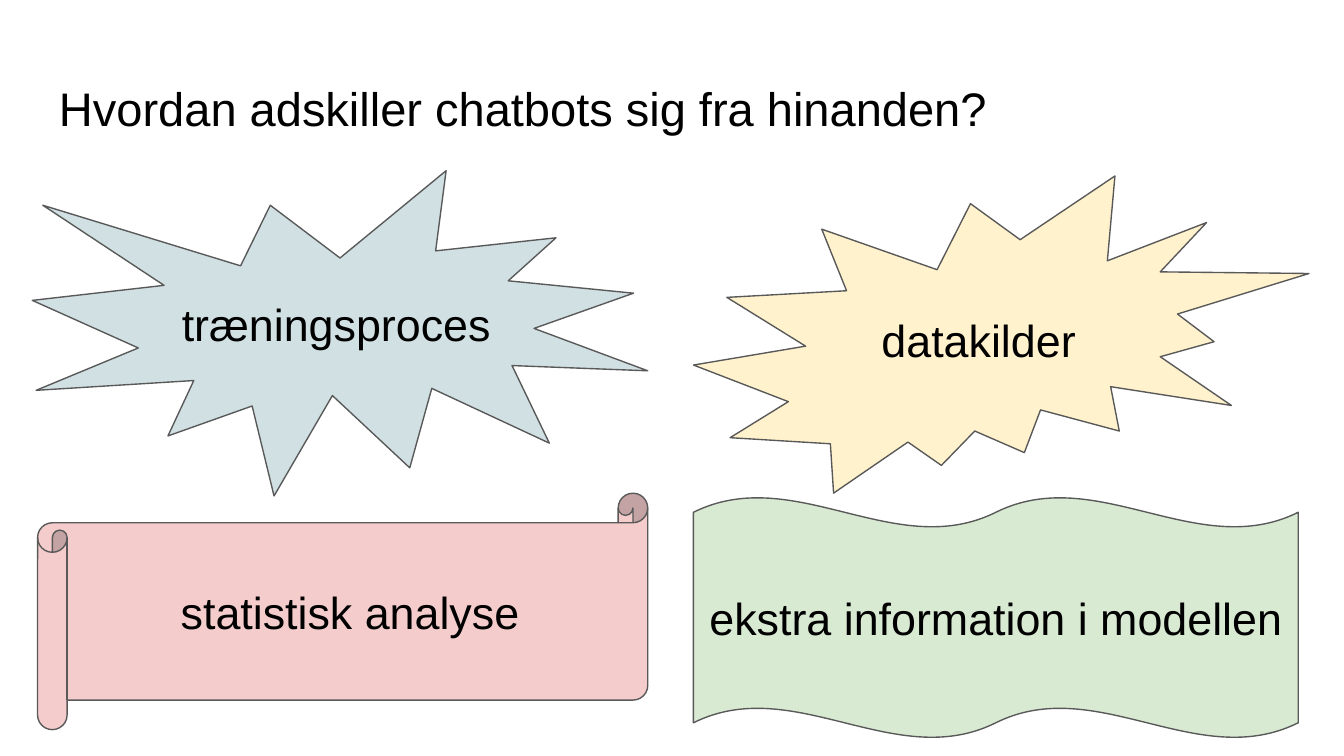
from pptx import Presentation
from pptx.dml.color import RGBColor
from pptx.enum.shapes import MSO_SHAPE
from pptx.enum.text import MSO_ANCHOR, PP_ALIGN
from pptx.util import Inches, Pt

BURST_SMALL = MSO_SHAPE.EXPLOSION1
BURST_LARGE = MSO_SHAPE.EXPLOSION2
SCROLL = MSO_SHAPE.HORIZONTAL_SCROLL
WAVE = MSO_SHAPE.DOUBLE_WAVE
TOP = MSO_ANCHOR.TOP
MIDDLE = MSO_ANCHOR.MIDDLE
LEFT = PP_ALIGN.LEFT
CENTER = PP_ALIGN.CENTER

COLORS = {
    "text": "000000",
    "outline": "595959",
    "blue": "D0E0E3",
    "yellow": "FFF2CC",
    "red": "F4CCCC",
    "green": "D9EAD3",
}


def color(name):
    return RGBColor.from_string(COLORS[name])


def write_text(box, text, size, anchor, alignment):
    frame = box.text_frame
    frame.word_wrap = True
    frame.vertical_anchor = anchor
    frame.margin_left = frame.margin_right = Inches(0.1)
    frame.margin_top = frame.margin_bottom = Inches(0.1)
    para = frame.paragraphs[0]
    para.alignment = alignment
    span = para.add_run()
    span.text = text
    span.font.name = "Arial"
    span.font.size = Pt(size)
    span.font.color.rgb = color("text")


deck = Presentation()
deck.slide_width = Inches(10)
deck.slide_height = Inches(10) * 9 // 16
page = deck.slides.add_slide(deck.slide_layouts[6])

title = page.shapes.add_textbox(Inches(0.34), Inches(0.49), Inches(9.32), Inches(0.63))
write_text(title, "Hvordan adskiller chatbots sig fra hinanden?", 25.2, TOP, LEFT)

differences = [
    (BURST_SMALL, 0.24, 1.27, 4.58, 2.42, "blue", "træningsproces"),
    (BURST_LARGE, 5.16, 1.31, 4.58, 2.36, "yellow", "datakilder"),
    (SCROLL, 0.28, 3.67, 4.54, 1.76, "red", "statistisk analyse"),
    (WAVE, 5.16, 3.7, 4.5, 1.79, "green", "ekstra information i modellen"),
]
for kind, left, top, width, height, fill, text in differences:
    shape = page.shapes.add_shape(
        kind, Inches(left), Inches(top), Inches(width), Inches(height)
    )
    shape.shadow.inherit = False
    shape.fill.solid()
    shape.fill.fore_color.rgb = color(fill)
    shape.line.color.rgb = color("outline")
    shape.line.width = Pt(0.75)
    write_text(shape, text, 24, MIDDLE, CENTER)

deck.save("out.pptx")
